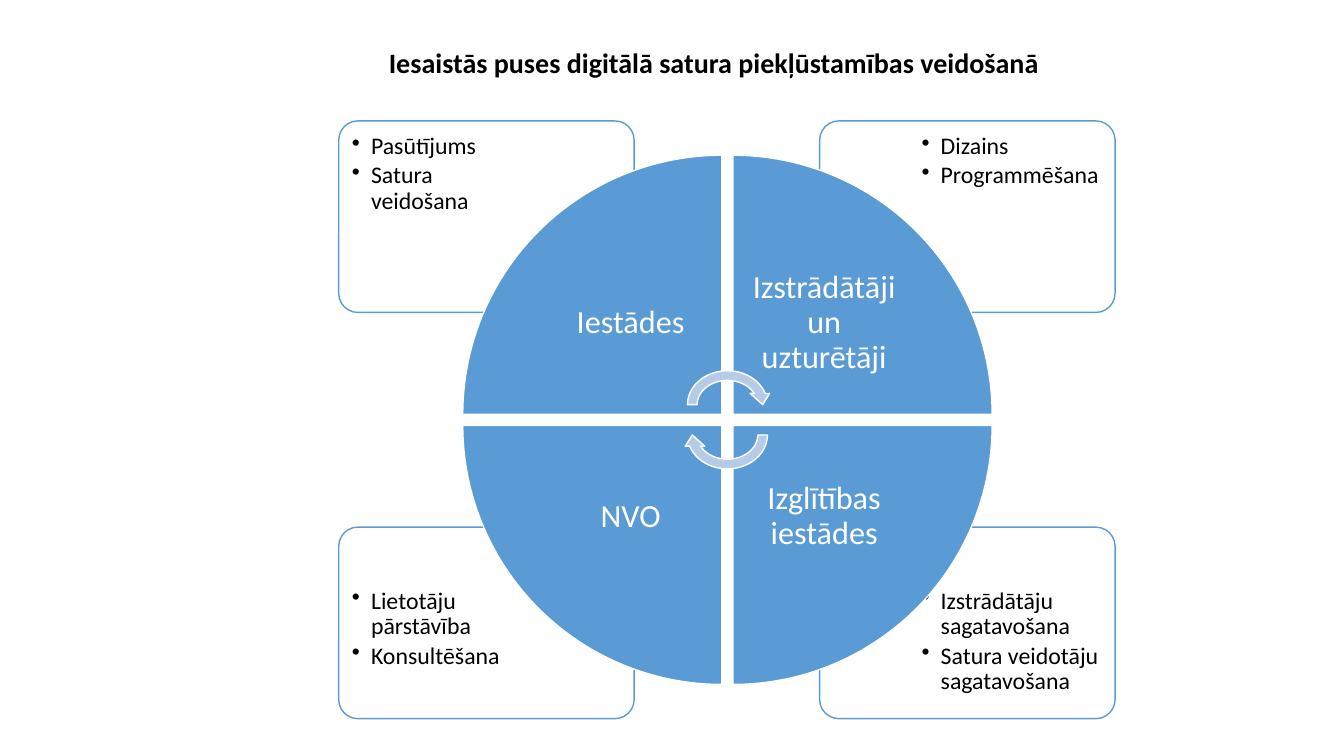
"""Build a slide on the parties who make digital content accessible."""
import lxml.etree
import pptx
import pptx.dml.color
import pptx.enum.shapes
import pptx.enum.text
import pptx.oxml.ns
import pptx.util

Inches = pptx.util.Inches
Pt = pptx.util.Pt
SHAPES = pptx.enum.shapes.MSO_SHAPE
ALIGN = pptx.enum.text.PP_ALIGN
ANCHOR = pptx.enum.text.MSO_ANCHOR
qn = pptx.oxml.ns.qn

BLUE = pptx.dml.color.RGBColor(0x5B, 0x9B, 0xD5)
PALE_BLUE = pptx.dml.color.RGBColor(0xB5, 0xCB, 0xE7)
WHITE = pptx.dml.color.RGBColor(0xFF, 0xFF, 0xFF)
BLACK = pptx.dml.color.RGBColor(0, 0, 0)

TITLE = "Iesaistās puses digitālā satura piekļūstamības veidošanā"
PARTIES = [
    {"column": 0, "row": 0, "turn": 0, "name": "Iestādes",
     "tasks": ["Pasūtījums", "Satura veidošana"]},
    {"column": 1, "row": 0, "turn": 90, "name": "Izstrādātāji un uzturētāji",
     "tasks": ["Dizains", "Programmēšana"]},
    {"column": 1, "row": 1, "turn": 180, "name": "Izglītības iestādes",
     "tasks": ["Izstrādātāju sagatavošana", "Satura veidotāju sagatavošana"]},
    {"column": 0, "row": 1, "turn": 270, "name": "NVO",
     "tasks": ["Lietotāju pārstāvība", "Konsultēšana"]},
]


def apply_format(target, values):
    """Set each named value on the target."""
    for name, value in values.items():
        setattr(target, name, value)


def add_figure(slide, preset, box, fill, line, turn=0):
    """Add a flat preset shape in the box, turned by the given degrees."""
    figure = slide.shapes.add_shape(preset, *map(Inches, box))
    figure.shadow.inherit = False
    figure.rotation = turn
    figure.fill.solid()
    figure.fill.fore_color.rgb = fill
    figure.line.color.rgb = line
    figure.line.width = Pt(1)
    return figure


def add_text(slide, box, texts, frame_format, paragraph_format, font_format, color, bullet=False):
    """Add a text box holding one paragraph for each text."""
    frame = slide.shapes.add_textbox(*map(Inches, box)).text_frame
    apply_format(frame, {"word_wrap": True, **frame_format})
    for index, text in enumerate(texts):
        paragraph = frame.add_paragraph() if index else frame.paragraphs[0]
        if bullet:
            properties = paragraph._p.get_or_add_pPr()
            properties.set("marL", str(Inches(0.19)))
            properties.set("indent", str(Inches(-0.19)))
            lxml.etree.SubElement(properties, qn("a:buChar"), char="•")
        apply_format(paragraph, paragraph_format)
        run = paragraph.add_run()
        run.text = text
        apply_format(run.font, {"name": "Calibri", **font_format})
        run.font.color.rgb = color


def equal_margins(inset):
    """Return the same text inset for all four sides."""
    return {f"margin_{side}": Inches(inset) for side in ("left", "top", "right", "bottom")}


def add_title(slide, box):
    """Place the heading in the box."""
    add_text(slide, box, [TITLE], {}, {"alignment": ALIGN.CENTER},
             {"size": Pt(20), "bold": True}, BLACK)


def add_task_cards(slide, box):
    """Place a card of tasks for each party in the corners of the box."""
    left, top, width, height = box
    card_width, card_height = 2.93, 1.9
    text_width, text_height, edge = 1.97, 1.34, 0.04
    for party in reversed(PARTIES):
        x = left + party["column"] * (width - card_width)
        y = top + party["row"] * (height - card_height)
        card = add_figure(slide, SHAPES.ROUNDED_RECTANGLE,
                          (x, y, card_width, card_height), WHITE, BLUE)
        card.adjustments[0] = 0.1
        fill_color = card._element.spPr.find(qn("a:solidFill"))[0]
        lxml.etree.SubElement(fill_color, qn("a:alpha"), val="90000")
        text_x = x + edge + party["column"] * (card_width - text_width - 2 * edge)
        text_y = y + edge + party["row"] * (card_height - text_height - 2 * edge)
        add_text(slide, (text_x, text_y, text_width, text_height), party["tasks"],
                 equal_margins(0.09), {"level": 1, "line_spacing": 0.9, "space_after": Pt(2.5)},
                 {"size": Pt(17)}, BLACK, bullet=True)


def add_party_wheel(slide, box):
    """Place a quarter circle for each party in the box, with its name near the hub."""
    left, top, side, _ = box
    gap, label_side = 0.11, 1.81
    wedge_side = (side - gap) / 2
    for party in PARTIES:
        x = left + party["column"] * (wedge_side + gap)
        y = top + party["row"] * (wedge_side + gap)
        add_figure(slide, SHAPES.PIE_WEDGE, (x, y, wedge_side, wedge_side),
                   BLUE, WHITE, party["turn"])
        label_x = x + (1 - party["column"]) * (wedge_side - label_side)
        label_y = y + (1 - party["row"]) * (wedge_side - label_side)
        add_text(slide, (label_x, label_y, label_side, label_side), [party["name"]],
                 {"vertical_anchor": ANCHOR.MIDDLE, **equal_margins(0.18)},
                 {"alignment": ALIGN.CENTER, "line_spacing": 0.9}, {"size": Pt(23)}, WHITE)


def add_cycle_arrows(slide, box):
    """Place two opposite circular arrows at the top and bottom of the box."""
    left, top, width, height = box
    arrow_height = 0.77
    for y, turn in ((top, 0), (top + height - arrow_height, 180)):
        add_figure(slide, SHAPES.CIRCULAR_ARROW, (left, y, width, arrow_height),
                   PALE_BLUE, WHITE, turn)


def main():
    """Build and save the presentation."""
    presentation = pptx.Presentation()
    apply_format(presentation, {"slide_width": Inches(13.33), "slide_height": Inches(7.5)})
    slide = presentation.slides.add_slide(presentation.slide_layouts[6])
    add_task_cards(slide, (3.36, 1.2, 7.7, 5.93))
    add_party_wheel(slide, (4.59, 1.54, 5.25, 5.25))
    add_cycle_arrows(slide, (6.77, 3.63, 0.89, 1.07))
    add_title(slide, (2.77, 0.4, 8.62, 0.51))
    presentation.save("out.pptx")


if __name__ == "__main__":
    main()
